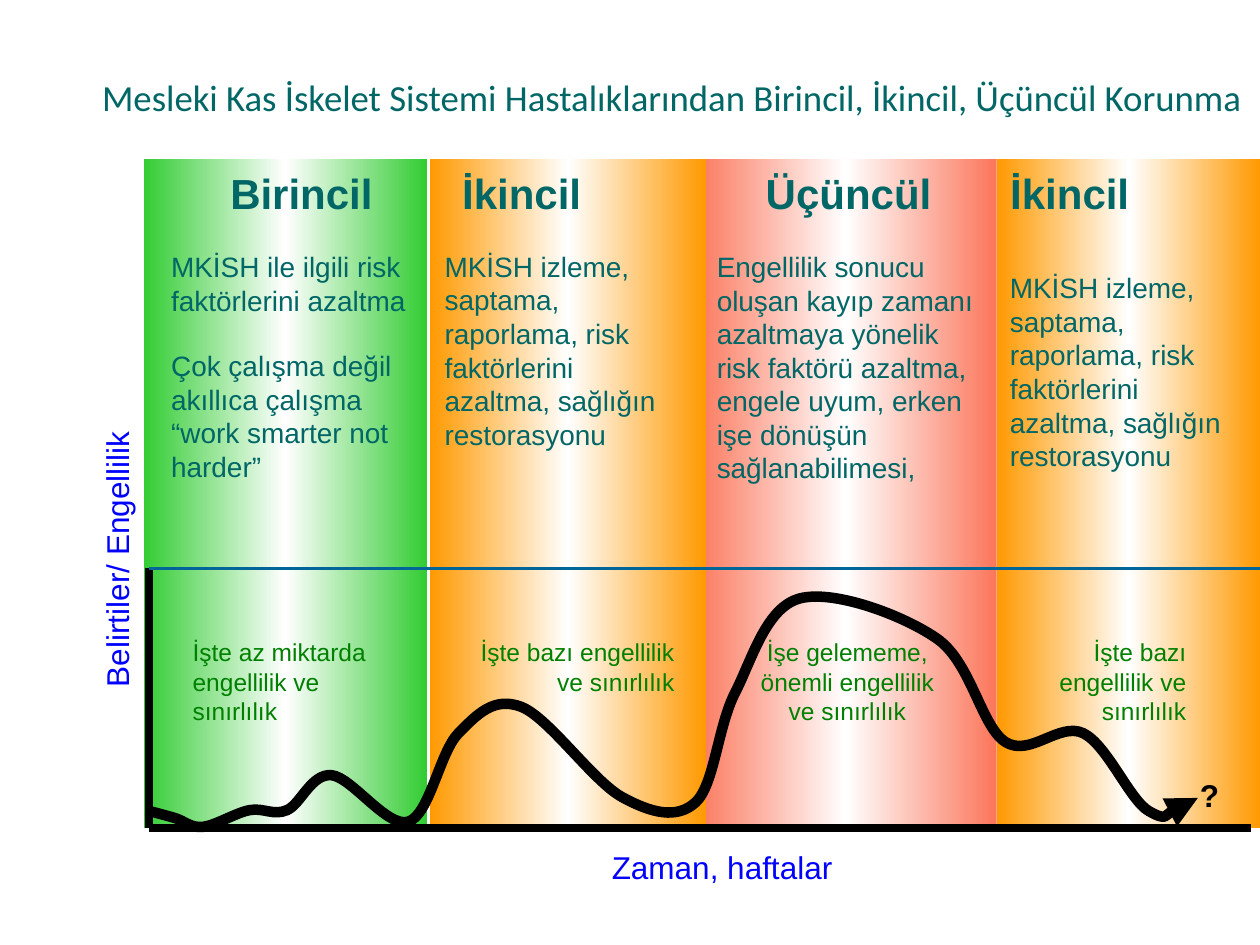
"""Build the slide on primary, secondary and tertiary prevention over time."""
from copy import deepcopy

from lxml import etree
from pptx import Presentation
from pptx.dml.color import RGBColor
from pptx.enum.shapes import MSO_CONNECTOR, MSO_SHAPE
from pptx.enum.text import MSO_ANCHOR, MSO_AUTO_SIZE, PP_ALIGN
from pptx.oxml.ns import qn
from pptx.util import Pt

STRAIGHT = MSO_CONNECTOR.STRAIGHT
RECT = MSO_SHAPE.RECTANGLE
FIT, MIDDLE = MSO_AUTO_SIZE.SHAPE_TO_FIT_TEXT, MSO_ANCHOR.MIDDLE
LEFT, CENTER, RIGHT = PP_ALIGN.LEFT, PP_ALIGN.CENTER, PP_ALIGN.RIGHT

COLORS = {
    "teal": "006666", "blue": "0000FF", "green": "008000", "black": "000000",
    "rule": "006699", "white": "FFFFFF", "primary": "33CC33",
    "secondary": "FF9900", "tertiary": "FB765B",
}
HEADING = {"name": "Arial", "size": Pt(24), "bold": True, "color": "teal"}
BODY = {"name": "Arial", "size": Pt(16), "color": "teal"}
NOTE = {"name": "Arial", "size": Pt(14), "color": "green"}
AXIS = {"name": "Arial", "size": Pt(18), "color": "blue"}
MARK = {"name": "Arial", "size": Pt(18), "bold": True, "color": "black"}
TITLE = {"name": "Calibri", "size": Pt(21), "color": "teal"}

BAND_TOP, BAND_HEIGHT = 91, 382
AXIS_X, AXIS_Y, RULE_Y = 85, 473, 324.7
PARAGRAPH_GAP = 18.4

BANDS = [
    (569.5, 151, "secondary"),
    (396.5, 173, "tertiary"),
    (82, 162, "primary"),
    (245.5, 158, "secondary"),
]
HEADINGS = [
    (124.5, 98, "Birincil"),
    (257, 84, "İkincil"),
    (430.5, 111, "Üçüncül"),
    (570.2, 84, "İkincil"),
]
SECONDARY = ("MKİSH izleme, saptama, raporlama, risk faktörlerini azaltma, "
             "sağlığın restorasyonu")
BODIES = [
    (90.7, 139, 162, 142, ["MKİSH ile ilgili risk faktörlerini azaltma",
                           "Çok çalışma değil akıllıca çalışma",
                           "“work smarter not harder”"]),
    (247, 139, 150, 122.5, [SECONDARY]),
    (402.5, 139, 168, 142, ["Engellilik sonucu oluşan kayıp zamanı azaltmaya "
                            "yönelik risk faktörü azaltma, engele uyum, erken "
                            "işe dönüşün sağlanabilimesi,"]),
    (570, 151.2, 150, 122.5, [SECONDARY]),
]
NOTES = [
    (103, 127.5, 57.5, LEFT, "İşte az miktarda engellilik ve sınırlılık"),
    (265, 127.5, 41, RIGHT, "İşte bazı engellilik ve sınırlılık"),
    (420.5, 127.5, 57.5, CENTER, "İşe gelememe, önemli engellilik ve sınırlılık"),
    (571, 114, 57.5, RIGHT, "İşte bazı engellilik ve sınırlılık"),
]
CURVE = [
    (83.5, 463), (100, 467.5), (116, 472.5), (142.5, 463), (164, 463),
    (189.5, 443), (233.5, 469.5), (262, 419), (298, 404), (355.5, 455.5),
    (397.5, 458.5), (420, 396), (457, 342), (535.5, 365), (574.5, 424),
    (619, 419), (656.5, 463.5), (684.5, 456),
]
CURVE_GUIDES = (65.5, 458.5), (691, 455)


def rgb(name):
    """Return the named colour."""
    return RGBColor.from_string(COLORS[name])


def format_font(font, style):
    """Apply a dict of format values to a font."""
    for key, value in style.items():
        if key == "color":
            font.color.rgb = rgb(value)
        else:
            setattr(font, key, value)


def add_title(s, text):
    """Place and format the title placeholder."""
    sp = s.shapes.title
    box = {"left": 48, "top": 20.5, "width": 672, "height": 70}
    for key, value in box.items():
        setattr(sp, key, Pt(value))
    tf = sp.text_frame
    tf.vertical_anchor = MIDDLE
    p = tf.paragraphs[0]
    p.alignment = CENTER
    r = p.add_run()
    r.text = text
    format_font(r.font, TITLE)


def add_text(s, box, texts, style, align=LEFT, wrap=True, gap_at=None):
    """Add a text box with one paragraph per text."""
    sp = s.shapes.add_textbox(*map(Pt, box))
    tf = sp.text_frame
    tf.word_wrap = wrap
    tf.auto_size = FIT
    for i, text in enumerate(texts):
        p = tf.add_paragraph() if i else tf.paragraphs[0]
        p.alignment = align
        if i == gap_at:
            p.space_before = Pt(PARAGRAPH_GAP)
        r = p.add_run()
        r.text = text
        format_font(r.font, style)
    return sp


def add_band(s, left, width, color):
    """Add a phase band that fades to white in its middle."""
    box = left, BAND_TOP, width, BAND_HEIGHT
    sp = s.shapes.add_shape(RECT, *map(Pt, box))
    sp.shadow.inherit = False
    sp.line.fill.background()
    sp.fill.gradient()
    sp.fill.gradient_angle = 0
    stops = sp._element.spPr.find(".//" + qn("a:gsLst"))
    stops.append(deepcopy(stops[0]))
    shades = (0, color), (0.5, "white"), (1, color)
    for stop, (position, shade) in zip(sp.fill.gradient_stops, shades):
        stop.position = position
        stop.color.rgb = rgb(shade)


def add_line(s, start, end, color, width):
    """Add a straight line without a shadow."""
    sp = s.shapes.add_connector(STRAIGHT, *map(Pt, start + end))
    sp.line.color.rgb = rgb(color)
    sp.line.width = Pt(width)
    etree.SubElement(sp._element.spPr, qn("a:effectLst"))


def add_curve(s, knots, guides):
    """Add a smooth arrow through the knots, steered by a guide at each end."""
    first, last = guides
    pts = [(Pt(x), Pt(y)) for x, y in [first, *knots, last]]
    builder = s.shapes.build_freeform(*pts[1], scale=1.0)
    builder.add_line_segments(pts[2:-1], close=False)
    sp = builder.convert_to_shape()
    sp.shadow.inherit = False
    sp.fill.background()
    sp.line.color.rgb = rgb("black")
    sp.line.width = Pt(6)
    segments = list(sp._element.iter(qn("a:lnTo")))
    for seg, a, b, c, d in zip(segments, pts, pts[1:], pts[2:], pts[3:]):
        bezier = etree.Element(qn("a:cubicBezTo"))
        leave = [q + (r - p) / 6 for p, q, r in zip(a, b, c)]
        arrive = [q - (r - p) / 6 for p, q, r in zip(b, c, d)]
        for x, y in (leave, arrive, c):
            etree.SubElement(bezier, qn("a:pt"), x=str(round(x - sp.left)),
                             y=str(round(y - sp.top)))
        seg.getparent().replace(seg, bezier)
    ln = sp._element.spPr.find(qn("a:ln"))
    etree.SubElement(ln, qn("a:tailEnd"), type="triangle")


def main():
    """Build and save the slide."""
    prs = Presentation()
    prs.slide_width, prs.slide_height = Pt(720), Pt(540)
    s = prs.slides.add_slide(prs.slide_layouts[5])
    add_title(s, "Mesleki Kas İskelet Sistemi Hastalıklarından Birincil, "
                 "İkincil, Üçüncül Korunma")
    for band in BANDS:
        add_band(s, *band)
    add_line(s, (AXIS_X, RULE_Y), (AXIS_X, AXIS_Y), "black", 4.5)
    add_line(s, (AXIS_X, AXIS_Y), (715, AXIS_Y), "black", 4.5)
    add_text(s, (342.5, 481, 140.5, 29), ["Zaman, haftalar"], AXIS, wrap=False)
    sp = add_text(s, (-13.5, 305, 160.5, 29), ["Belirtiler/ Engellilik"], AXIS,
                  wrap=False)
    sp.rotation = 270
    add_curve(s, CURVE, CURVE_GUIDES)
    for left, width, text in HEADINGS:
        add_text(s, (left, 92, width, 36), [text], HEADING, wrap=False)
    for *box, texts in BODIES:
        add_text(s, box, texts, BODY, gap_at=1)
    for left, width, height, align, text in NOTES:
        add_text(s, (left, 360.7, width, height), [text], NOTE, align)
    add_text(s, (678.5, 440, 26, 29), ["?"], MARK, wrap=False)
    add_line(s, (AXIS_X, RULE_Y), (720, RULE_Y), "rule", 1.5)
    prs.save("out.pptx")


if __name__ == "__main__":
    main()
